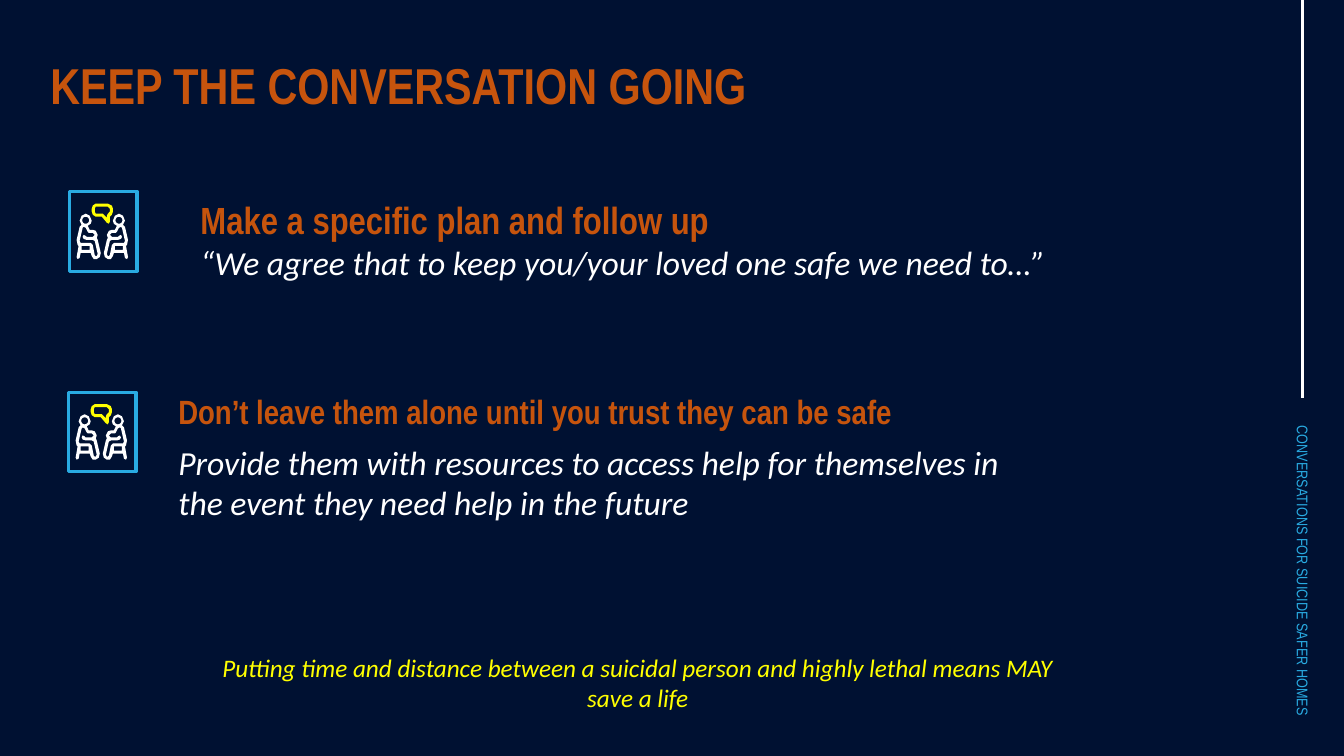
from math import cos, pi, sin

from lxml.etree import SubElement
from pptx import Presentation
from pptx.dml.color import RGBColor
from pptx.enum.shapes import MSO_CONNECTOR as Connector, MSO_SHAPE as Shape
from pptx.enum.text import MSO_ANCHOR as Anchor, PP_ALIGN as Align
from pptx.oxml.ns import qn
from pptx.util import Inches, Pt

NAVY, WHITE, ORANGE, BLUE, YELLOW = "001132", "FFFFFF", "C6540D", "29ABE2", "FFFF00"
HEADING, BODY = "Arial Narrow", "Calibri"

# Icon outlines, in hundredths of an inch from the frame's top left corner
HEAD = [(16 + 3.5 * cos(i * pi / 8), 28.5 + 3.5 * sin(i * pi / 8)) for i in range(16)]
STOOL = [(20, 54), (20, 58), (12, 58), (12, 54)]
TORSO = [(14, 35), (16, 36), (18, 40), (19, 41), (23, 41), (25, 43), (23, 45),
         (17, 45), (16, 44), (14, 43), (13, 45), (14, 47), (17, 48), (23, 48),
         (25, 49), (28, 62), (27, 64), (26, 64), (25, 63), (23, 53), (21, 51),
         (11, 51), (10, 49), (13, 36)]
FIGURE = [(16, 22), (12, 24), (10, 29), (12, 33), (10, 35), (7, 48), (8, 53),
          (9, 54), (7, 65), (8, 67), (10, 66), (11, 61), (21, 61), (22, 64),
          (24, 67), (27, 67), (30, 65), (31, 61), (28, 48), (27, 46), (28, 43),
          (26, 39), (23, 38), (20, 38), (18, 34), (21, 32), (22, 29), (20, 24)]
BUBBLE_INSIDE = [(38, 15), (40, 17), (40, 20), (38, 22), (37, 24), (37, 26),
                 (33, 22), (26, 22), (25, 20), (25, 17), (26, 15)]
BUBBLE = [(26, 12), (23, 14), (22, 17), (22, 20), (23, 23), (26, 25), (32, 25),
          (37, 31), (39, 32), (40, 30), (40, 25), (42, 23), (43, 20), (43, 17),
          (42, 14), (38, 12)]
LISTENER = [HEAD, STOOL, TORSO, FIGURE]
MIRROR_WIDTH = 65


def color(hex_value):
    return RGBColor.from_string(hex_value)


def add_text(slide, left, top, width, height, lines, anchor=Anchor.TOP,
             align=Align.LEFT, inset=0.1, spacing=None, fill=None):
    """Each line is (text, size, font, colour, bold, italic)."""
    box = slide.shapes.add_textbox(Inches(left), Inches(top), Inches(width), Inches(height))
    if fill:
        box.fill.solid()
        box.fill.fore_color.rgb = color(fill)
    frame = box.text_frame
    frame.word_wrap = True
    frame.vertical_anchor = anchor
    frame.margin_left = frame.margin_right = Inches(0.1)
    frame.margin_top = frame.margin_bottom = Inches(inset)
    for number, (text, size, font, text_color, bold, italic) in enumerate(lines):
        paragraph = frame.add_paragraph() if number else frame.paragraphs[0]
        paragraph.alignment = align
        paragraph.line_spacing = spacing
        run = paragraph.add_run()
        run.text = text
        run.font.size = Pt(size)
        run.font.name = font
        run.font.color.rgb = color(text_color)
        run.font.bold = bold
        run.font.italic = italic
    return box


def add_outline(slide, left, top, contours, fill):
    scaled = [[(x * 10, y * 10) for x, y in contour] for contour in contours]
    builder = slide.shapes.build_freeform(*scaled[0][0], scale=Inches(0.001))
    builder.add_line_segments(scaled[0][1:], close=True)
    for contour in scaled[1:]:
        builder.move_to(*contour[0])
        builder.add_line_segments(contour[1:], close=True)
    outline = builder.convert_to_shape(Inches(left), Inches(top))
    outline.shadow.inherit = False
    outline.fill.solid()
    outline.fill.fore_color.rgb = color(fill)
    outline.line.fill.background()


def add_talk_icon(slide, left, top):
    mirrored = [[(MIRROR_WIDTH - x, y) for x, y in contour] for contour in LISTENER]
    add_outline(slide, left, top, LISTENER, WHITE)
    add_outline(slide, left, top, mirrored, WHITE)
    add_outline(slide, left, top, [BUBBLE_INSIDE, BUBBLE], YELLOW)
    border = slide.shapes.add_shape(Shape.RECTANGLE, Inches(left), Inches(top),
                                    Inches(0.67), Inches(0.79))
    border.shadow.inherit = False
    border.fill.background()
    border.line.color.rgb = color(BLUE)
    border.line.width = Pt(2.25)


def add_rule(slide, x, top, bottom):
    rule = slide.shapes.add_connector(Connector.STRAIGHT, Inches(x), Inches(top),
                                      Inches(x), Inches(bottom))
    rule.line.color.rgb = color(WHITE)
    rule.line.width = Pt(2.25)
    SubElement(rule._element.spPr, qn("a:effectLst"))


def main():
    deck = Presentation()
    deck.slide_width, deck.slide_height = Inches(13.33), Inches(7.5)
    slide = deck.slides.add_slide(deck.slide_layouts[6])
    slide.background.fill.solid()
    slide.background.fill.fore_color.rgb = color(NAVY)

    # Side strip
    add_rule(slide, 12.92, -0.11, 3.95)
    program = add_text(slide, 11.23, 5.67, 3.38, 0.29, [
        ("CONVERSATIONS FOR SUICIDE SAFER HOMES", 11, HEADING, BLUE, False, False)],
        inset=0.05)
    program.rotation = 90

    # Title
    add_text(slide, 0.4, 0.32, 12.35, 0.92, [
        ("KEEP THE CONVERSATION GOING", 36, HEADING, ORANGE, True, False)],
        anchor=Anchor.BOTTOM, spacing=1.15)

    # Plan and follow up
    add_talk_icon(slide, 0.69, 1.9)
    add_text(slide, 1.89, 1.85, 10.06, 1.38, [
        ("Make a specific plan and follow up", 27, HEADING, ORANGE, True, False),
        ("“We agree that to keep you/your loved one safe we need to…”",
         24, BODY, WHITE, False, True)])

    # Stay until safe
    add_talk_icon(slide, 0.68, 3.89)
    add_text(slide, 1.67, 3.84, 9, 0.54, [
        ("Don’t leave them alone until you trust they can be safe",
         24, HEADING, ORANGE, True, False)], anchor=Anchor.BOTTOM)
    add_text(slide, 1.67, 4.28, 8.64, 0.95, [
        ("Provide them with resources to access help for themselves in "
         "the event they need help in the future", 24, BODY, WHITE, False, True)],
        fill=NAVY)

    # Closing message
    add_text(slide, 1.98, 6.37, 8.69, 0.95, [
        ("Putting time and distance between a suicidal person and highly "
         "lethal means MAY save a life", 18, BODY, YELLOW, False, True)],
        align=Align.CENTER)

    deck.save("out.pptx")


if __name__ == "__main__":
    main()
